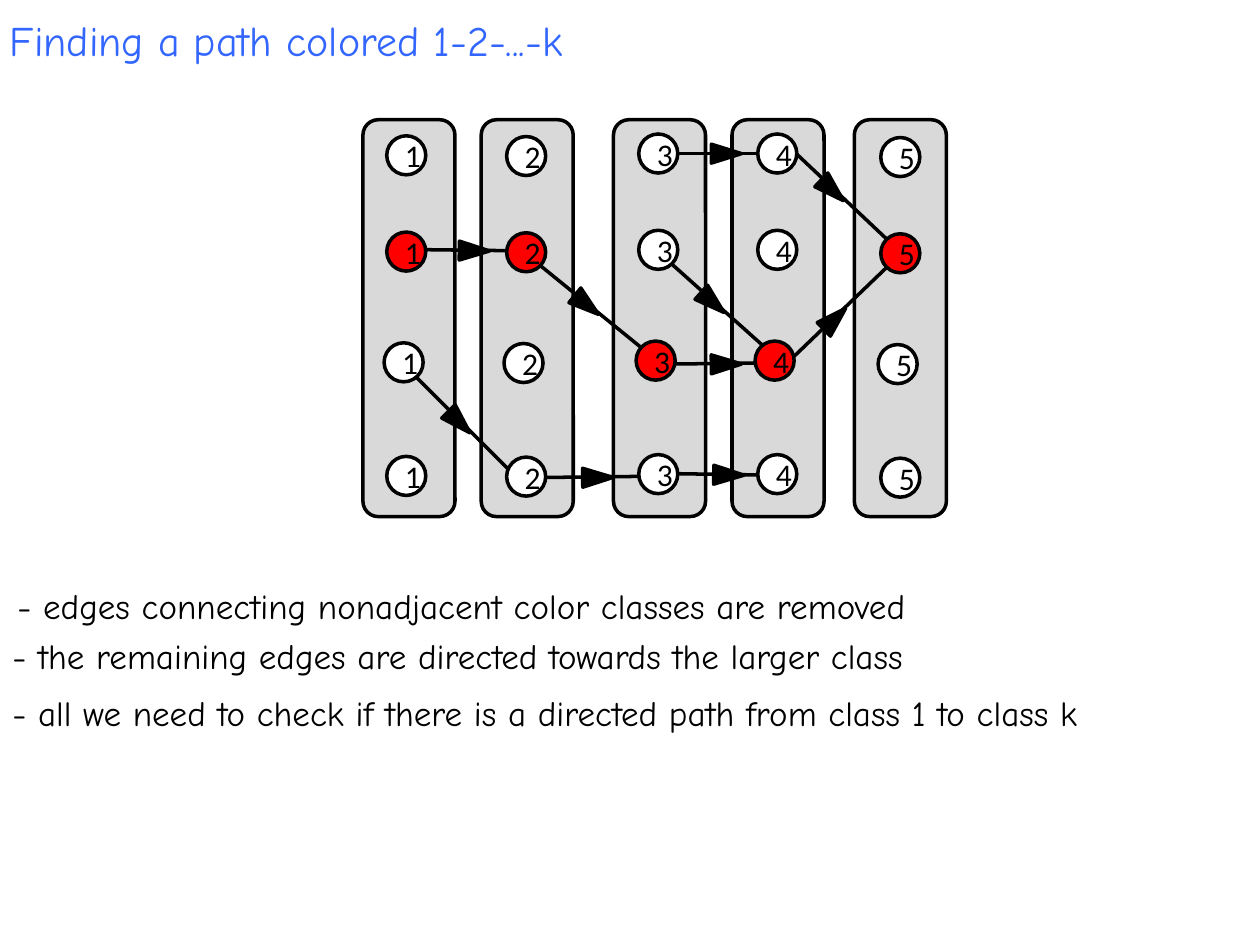
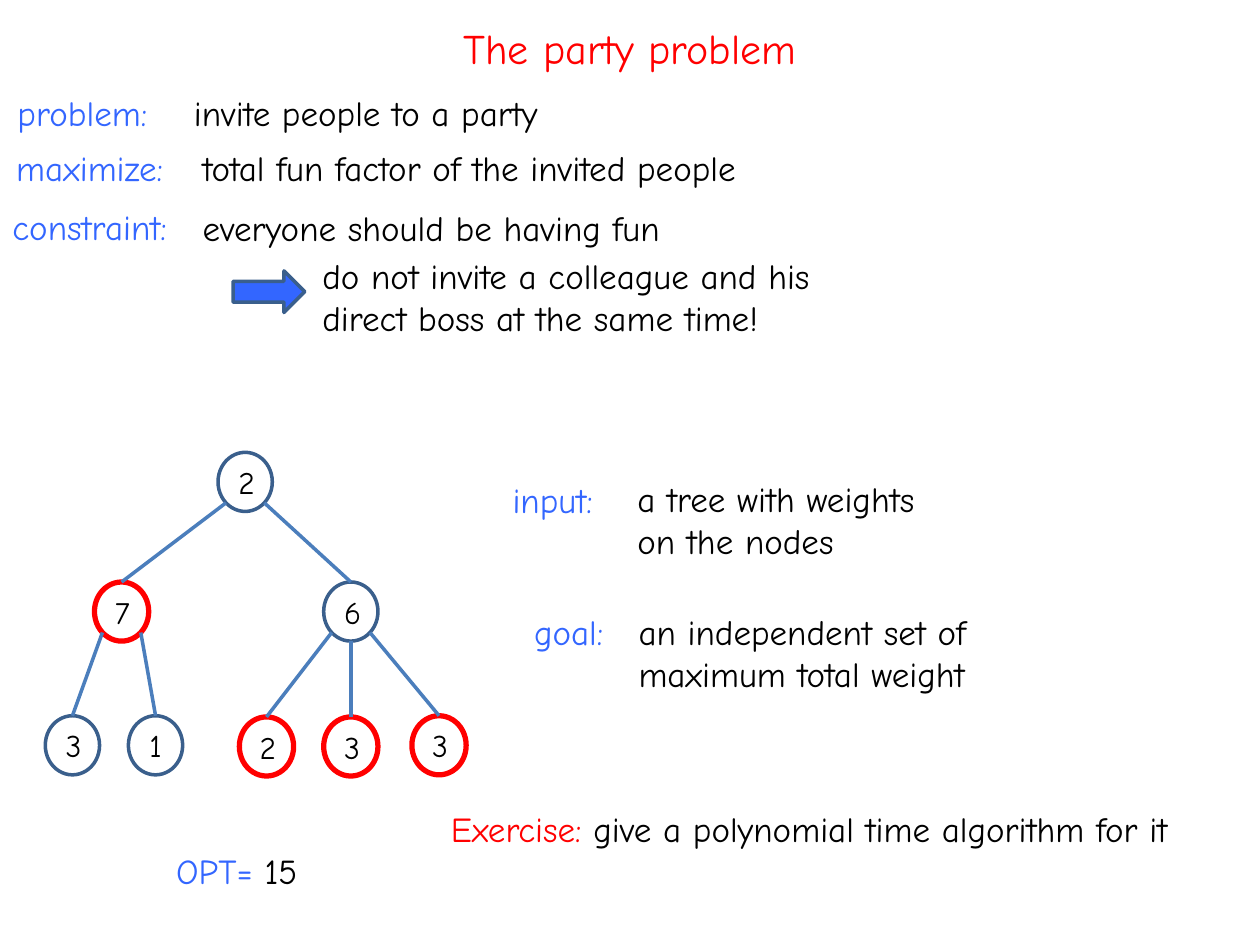
"""Build two lecture slides: a colored path search and the party problem."""
import dataclasses
import math

import lxml.etree
import pptx
import pptx.dml.color
import pptx.enum.shapes
import pptx.enum.text
import pptx.oxml.ns
import pptx.util

Pt = pptx.util.Pt
Shapes = pptx.enum.shapes.MSO_SHAPE
Align = pptx.enum.text.PP_ALIGN


@dataclasses.dataclass(frozen=True)
class Theme:
    """Colours, typefaces and sizes shared by both slides."""
    black: str = "000000"
    white: str = "FFFFFF"
    blue: str = "3366FF"
    red: str = "FF0000"
    band: str = "D9D9D9"
    outline: str = "3A5F8C"
    branch: str = "4B7EBC"
    text_font: str = "Comic Neue"
    digit_font: str = "Calibri"
    title_size: float = 24
    body_size: float = 20
    node_size: float = 18
    line_width: float = 2
    chosen_width: float = 3


THEME = Theme()

BAND_LEFTS = (207.4, 275, 350.6, 418.3, 488.2)
NODE_LEFTS = (221, 289.5, 365, 433, 503.3)
NODE_DROPS = (0, 0.4, -1, -1, 1)
NODE_ROWS = ((77.6, 0), (132.6, 0), (195.9, -1.5), (260.8, 0))
NODE_DIAMETER = 22.3
PATH_NODES = {(1, 1), (1, 2), (2, 3), (2, 4), (1, 5)}

# start, end, arrowhead centre
DIRECTED_EDGES = (
    ((235.4, 142.6), (295.2, 143.3), (271.1, 143.3)),
    ((308.9, 151.9), (366.5, 198.7), (335.2, 174.2)),
    ((233.3, 211), (295.2, 272.9), (262.4, 241.2)),
    ((450.7, 206.6), (506.9, 152.6), (477, 182.2)),
    ((386.6, 270.7), (432.7, 271.4), (416.5, 271.4)),
    ((306.7, 272.9), (369.4, 272.2), (341.6, 272.9)),
    ((377.3, 208.1), (439.9, 207.4), (415.1, 208.1)),
    ((379.4, 146.9), (442.1, 203), (407.2, 172.8)),
    ((455, 87.8), (506.9, 136.8), (475.6, 108.7)),
    ((380.9, 87.8), (443.5, 87.8), (415.1, 87.8)),
)

TREE_WIDTH, TREE_HEIGHT = 31, 33.8
# weight, left, top, parent index, in the independent set
TREE_NODES = (
    ("2", 124.6, 258.5, None, False),
    ("7", 54, 332.6, 0, True),
    ("6", 185, 332.6, 0, False),
    ("3", 25.9, 409, 1, False),
    ("1", 73.4, 409, 1, False),
    ("2", 136.8, 409.7, 2, True),
    ("3", 185, 409.7, 2, True),
    ("3", 235.4, 409, 2, True),
)


def rgb(value):
    """Return a colour from its hexadecimal value."""
    return pptx.dml.color.RGBColor.from_string(value)


def style_font(font, name, size, color=None):
    """Set typeface, size and optionally colour of a font."""
    font.name = name
    font.size = Pt(size)
    if color:
        font.color.rgb = rgb(color)


def add_text(slide, box, *parts, size=THEME.body_size, align=Align.LEFT):
    """Add a text box whose parts are (text, colour) pairs."""
    frame = slide.shapes.add_textbox(*map(Pt, box)).text_frame
    frame.word_wrap = True
    paragraph = frame.paragraphs[0]
    paragraph.alignment = align
    shared_color = parts[0][1] if len(parts) == 1 else None
    style_font(paragraph.font, THEME.text_font, size, shared_color)
    for text, color in parts:
        run = paragraph.add_run()
        run.text = text
        if not shared_color:
            run.font.color.rgb = rgb(color)


def add_title(slide, box, text, color, align=Align.LEFT):
    """Add a slide title."""
    add_text(slide, box, (text, color), size=THEME.title_size, align=align)


def add_figure(slide, kind, box, fill=None, line=THEME.black, width=THEME.line_width):
    """Add a flat preset shape, hollow when no fill is given."""
    shape = slide.shapes.add_shape(kind, *map(Pt, box))
    shape.shadow.inherit = False
    if fill:
        shape.fill.solid()
        shape.fill.fore_color.rgb = rgb(fill)
    else:
        shape.fill.background()
    shape.line.color.rgb = rgb(line)
    shape.line.width = Pt(width)
    return shape


def add_node(slide, box, label, font_name, **look):
    """Add a labelled ellipse."""
    shape = add_figure(slide, Shapes.OVAL, box, **look)
    shape.text_frame.vertical_anchor = pptx.enum.text.MSO_ANCHOR.MIDDLE
    paragraph = shape.text_frame.paragraphs[0]
    paragraph.text = label
    paragraph.alignment = Align.CENTER
    style_font(paragraph.font, font_name, THEME.node_size, THEME.black)


def add_line(slide, start, end, color):
    """Add a straight connector without a shadow."""
    connector = slide.shapes.add_connector(
        pptx.enum.shapes.MSO_CONNECTOR.STRAIGHT, *map(Pt, (*start, *end)))
    connector.line.color.rgb = rgb(color)
    connector.line.width = Pt(THEME.line_width)
    properties = connector._element.spPr
    lxml.etree.SubElement(properties, pptx.oxml.ns.qn("a:effectLst"))


def add_arrowhead(slide, start, end, center):
    """Add a triangle in the middle of an edge, turned along it."""
    width, height = 10.8, 17.3
    box = (center[0] - width / 2, center[1] - height / 2, width, height)
    triangle = add_figure(slide, Shapes.ISOSCELES_TRIANGLE, box, THEME.black)
    angle = math.atan2(end[1] - start[1], end[0] - start[0])
    triangle.rotation = round(90 + math.degrees(angle), 1)


def add_color_classes(slide):
    """Draw the class bands, directed edges, nodes and arrowheads."""
    for left in BAND_LEFTS:
        add_figure(slide, Shapes.ROUNDED_RECTANGLE, (left, 68.4, 52.6, 226.8), THEME.band)
    for start, end, _ in DIRECTED_EDGES:
        add_line(slide, start, end, THEME.black)
    for row, (top, shift) in enumerate(NODE_ROWS):
        for number, (left, drop) in enumerate(zip(NODE_LEFTS, NODE_DROPS), 1):
            box = (left + shift, top + drop, NODE_DIAMETER, NODE_DIAMETER)
            fill = THEME.red if (row, number) in PATH_NODES else THEME.white
            add_node(slide, box, str(number), THEME.digit_font, fill=fill)
    for edge in DIRECTED_EDGES:
        add_arrowhead(slide, *edge)


def branch_start(parent_left, parent_top, child_left):
    """Return the point on a parent's lower rim that faces its child."""
    offset = child_left - parent_left
    side = 0 if abs(offset) < 1 else math.copysign(1, offset)
    angle = math.radians(90 - 45 * side)
    return (parent_left + TREE_WIDTH / 2 * (1 + math.cos(angle)),
            parent_top + TREE_HEIGHT / 2 * (1 + math.sin(angle)))


def add_weighted_tree(slide):
    """Draw the tree with the optimal independent set outlined in red."""
    for weight, left, top, _, chosen in TREE_NODES:
        add_node(slide, (left, top, TREE_WIDTH, TREE_HEIGHT), weight, THEME.text_font,
                 line=THEME.red if chosen else THEME.outline,
                 width=THEME.chosen_width if chosen else THEME.line_width)
    for _, left, top, parent, _ in TREE_NODES:
        if parent is not None:
            _, parent_left, parent_top, _, _ = TREE_NODES[parent]
            start = branch_start(parent_left, parent_top, left)
            add_line(slide, start, (left + TREE_WIDTH / 2, top), THEME.branch)


def build_path_slide(slide):
    """Fill the slide about finding a colored path."""
    add_title(slide, (-1.4, 5, 462, 35.3), "Finding a path colored 1-2-...-k", THEME.blue)
    add_color_classes(slide)
    for left, top, text in (
        (2.9, 330.5, "- edges connecting nonadjacent color classes are removed"),
        (0, 359.3, "- the remaining edges are directed towards the larger class"),
        (0, 391.7, "- all we need to check if there is a directed path from class 1 to class k"),
    ):
        add_text(slide, (left, top, 695, 31.7), (text, THEME.black))


def build_party_slide(slide):
    """Fill the slide about the party problem."""
    add_title(slide, (128.9, 9.4, 462.2, 67.7), "The party problem", THEME.red, Align.CENTER)
    for box, text in (
        ((2.9, 49, 100, 31.7), "problem:"),
        ((2.2, 79.9, 105, 31.7), "maximize:"),
        ((0, 113.8, 108, 31.7), "constraint:"),
        ((285.8, 270, 79.9, 31.7), "input:"),
        ((298.1, 345.6, 65.5, 31.7), "goal:"),
    ):
        add_text(slide, box, (text, THEME.blue))
    for box, text in (
        ((103.7, 49, 590, 31.7), "invite people to a party"),
        ((108.7, 79.9, 482.4, 31.7), "total fun factor of the invited people"),
        ((108.7, 114.5, 592.6, 31.7), "everyone should be having fun"),
        ((177.1, 141.8, 310.3, 55.4),
         "do not invite a colleague and his direct boss at the same time!"),
        ((357.1, 269.3, 195.8, 55.4), "a tree with weights on the nodes"),
        ((357.8, 345.6, 246.2, 55.4), "an independent set of maximum total weight"),
    ):
        add_text(slide, box, (text, THEME.black))
    add_figure(slide, Shapes.RIGHT_ARROW, (133.2, 154.8, 41, 23.8), THEME.blue, THEME.outline)
    add_weighted_tree(slide)
    add_text(slide, (93.6, 481.7, 195.8, 31.7), ("OPT= ", THEME.blue), ("15", THEME.black))
    add_text(slide, (250.6, 457.9, 467.3, 67.7), ("Exercise: ", THEME.red),
             ("give a polynomial time algorithm for it", THEME.black))


def main():
    """Create and save the presentation."""
    presentation = pptx.Presentation()
    presentation.slide_width, presentation.slide_height = Pt(720), Pt(540)
    blank = presentation.slide_layouts[6]
    for build in (build_path_slide, build_party_slide):
        build(presentation.slides.add_slide(blank))
    presentation.save("out.pptx")


if __name__ == "__main__":
    main()
